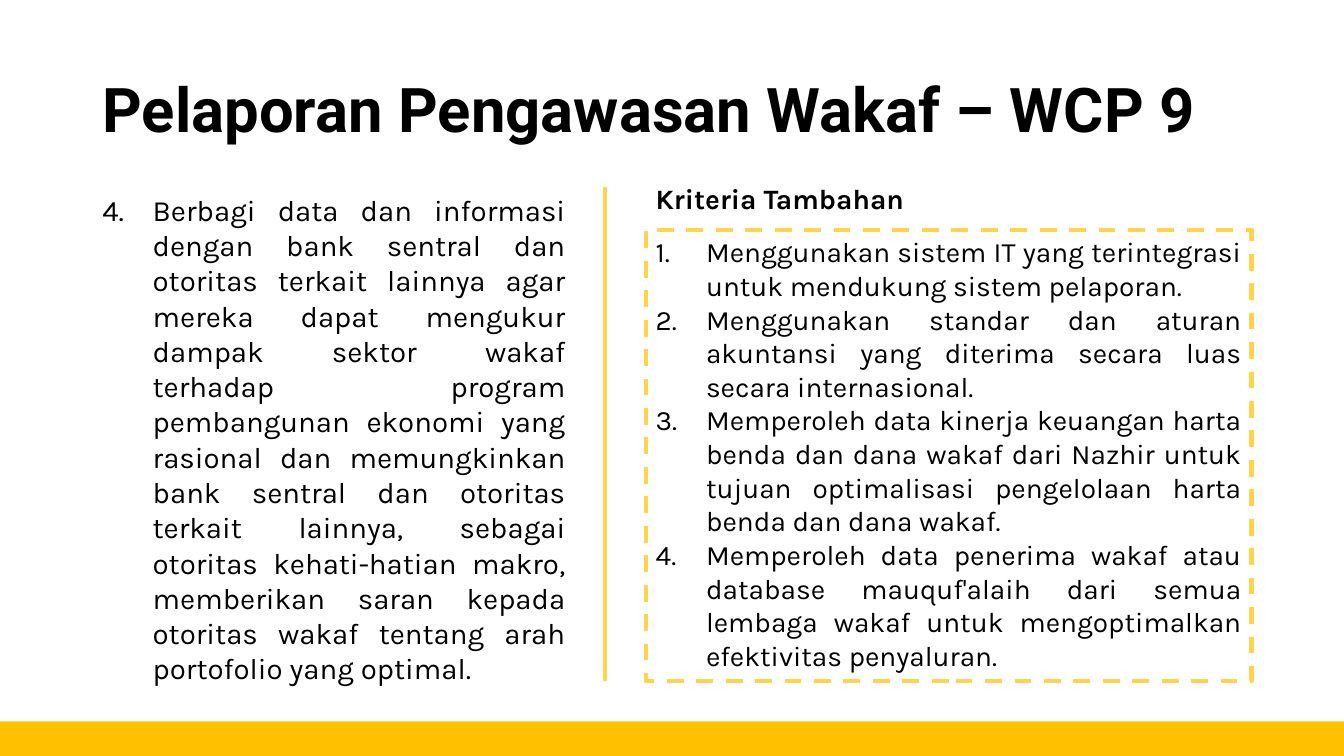
from lxml import etree
from pptx import Presentation
from pptx.dml.color import RGBColor
from pptx.enum.dml import MSO_LINE
from pptx.enum.shapes import MSO_CONNECTOR, MSO_SHAPE
from pptx.enum.text import MSO_ANCHOR, MSO_AUTO_SIZE, PP_ALIGN
from pptx.oxml.ns import qn
from pptx.util import Emu, Pt

EMU_PER_PX = 9525
TITLE_ONLY = 5
NUMBER_INDENT = 48

BLACK = RGBColor(0x00, 0x00, 0x00)
AMBER = RGBColor(0xFF, 0xC0, 0x00)
YELLOW = RGBColor(0xFF, 0xD4, 0x4B)

RECTANGLE = MSO_SHAPE.RECTANGLE
STRAIGHT = MSO_CONNECTOR.STRAIGHT
DASH = MSO_LINE.DASH
LEFT, JUSTIFY = PP_ALIGN.LEFT, PP_ALIGN.JUSTIFY
TOP, MIDDLE = MSO_ANCHOR.TOP, MSO_ANCHOR.MIDDLE

TITLE = "Pelaporan Pengawasan Wakaf – WCP 9"
SHARING_START = 4
SHARING = [
    "Berbagi data dan informasi dengan bank sentral dan otoritas terkait lainnya "
    "agar mereka dapat mengukur dampak sektor wakaf terhadap program pembangunan "
    "ekonomi yang rasional dan memungkinkan bank sentral dan otoritas terkait "
    "lainnya, sebagai otoritas kehati-hatian makro, memberikan saran kepada "
    "otoritas wakaf tentang arah portofolio yang optimal.",
]
CRITERIA_HEADING = "Kriteria Tambahan"
CRITERIA = [
    "Menggunakan sistem IT yang terintegrasi untuk mendukung sistem pelaporan.",
    "Menggunakan standar dan aturan akuntansi yang diterima secara luas secara "
    "internasional.",
    "Memperoleh data kinerja keuangan harta benda dan dana wakaf dari Nazhir untuk "
    "tujuan optimalisasi pengelolaan harta benda dan dana wakaf.",
    "Memperoleh data penerima wakaf atau database mauquf'alaih dari semua lembaga "
    "wakaf untuk mengoptimalkan efektivitas penyaluran.",
]


def px(length):
    return Emu(length * EMU_PER_PX)


def add_span(para, text, size, font="Karla", bold=False):
    span = para.add_run()
    span.text = text
    span.font.name = font
    span.font.size = Pt(size)
    span.font.bold = bold
    span.font.color.rgb = BLACK


def number_paragraph(para, start):
    """Give the paragraph a hanging 1. 2. 3. number."""
    properties = para._p.get_or_add_pPr()
    properties.set("marL", str(px(NUMBER_INDENT)))
    properties.set("indent", str(-px(NUMBER_INDENT)))
    numbering = etree.SubElement(properties, qn("a:buAutoNum"), type="arabicPeriod")
    if start > 1:
        numbering.set("startAt", str(start))


def fill_numbered_list(frame, items, size, start=1):
    for index, item in enumerate(items):
        para = frame.add_paragraph() if index else frame.paragraphs[0]
        number_paragraph(para, start)
        para.alignment = JUSTIFY
        add_span(para, item, size)


def prepare_frame(box):
    frame = box.text_frame
    frame.word_wrap = True
    frame.auto_size = MSO_AUTO_SIZE.SHAPE_TO_FIT_TEXT
    frame.vertical_anchor = TOP
    return frame


def add_text_frame(page, left, top, width, height):
    box = page.shapes.add_textbox(px(left), px(top), px(width), px(height))
    return prepare_frame(box)


def add_rectangle(page, left, top, width, height):
    box = page.shapes.add_shape(RECTANGLE, px(left), px(top), px(width), px(height))
    box.shadow.inherit = False
    return box


def add_bottom_bar(page):
    bar = add_rectangle(page, 0, 687, 1280, 33)
    bar.fill.solid()
    bar.fill.fore_color.rgb = AMBER
    bar.line.fill.background()


def set_title(page):
    title = page.shapes.title
    title.left, title.top = px(88), px(38)
    title.width, title.height = px(1104), px(139)
    frame = title.text_frame
    frame.word_wrap = True
    frame.auto_size = MSO_AUTO_SIZE.NONE
    frame.vertical_anchor = MIDDLE
    para = frame.paragraphs[0]
    para.alignment = LEFT
    para.line_spacing = 0.9
    add_span(para, TITLE, 44, font="Roboto", bold=True)


def add_criteria_heading(page):
    para = add_text_frame(page, 615, 168, 266, 42).paragraphs[0]
    para.alignment = JUSTIFY
    add_span(para, CRITERIA_HEADING, 20, bold=True)


def add_criteria_box(page):
    box = add_rectangle(page, 615, 219, 577, 430)
    box.fill.background()
    box.line.color.rgb = YELLOW
    box.line.width = Pt(3)
    box.line.dash_style = DASH
    fill_numbered_list(prepare_frame(box), CRITERIA, 20)


def add_divider(page):
    divider = page.shapes.add_connector(STRAIGHT, px(576), px(178), px(576), px(649))
    divider.line.color.rgb = YELLOW
    divider.line.width = Pt(3)
    etree.SubElement(divider._element.spPr, qn("a:effectLst"))


def main():
    deck = Presentation()
    deck.slide_width, deck.slide_height = px(1280), px(720)
    page = deck.slides.add_slide(deck.slide_layouts[TITLE_ONLY])
    add_bottom_bar(page)
    set_title(page)
    sharing = add_text_frame(page, 88, 178, 460, 485)
    fill_numbered_list(sharing, SHARING, 21, SHARING_START)
    add_criteria_heading(page)
    add_criteria_box(page)
    add_divider(page)
    deck.save("out.pptx")


if __name__ == "__main__":
    main()
